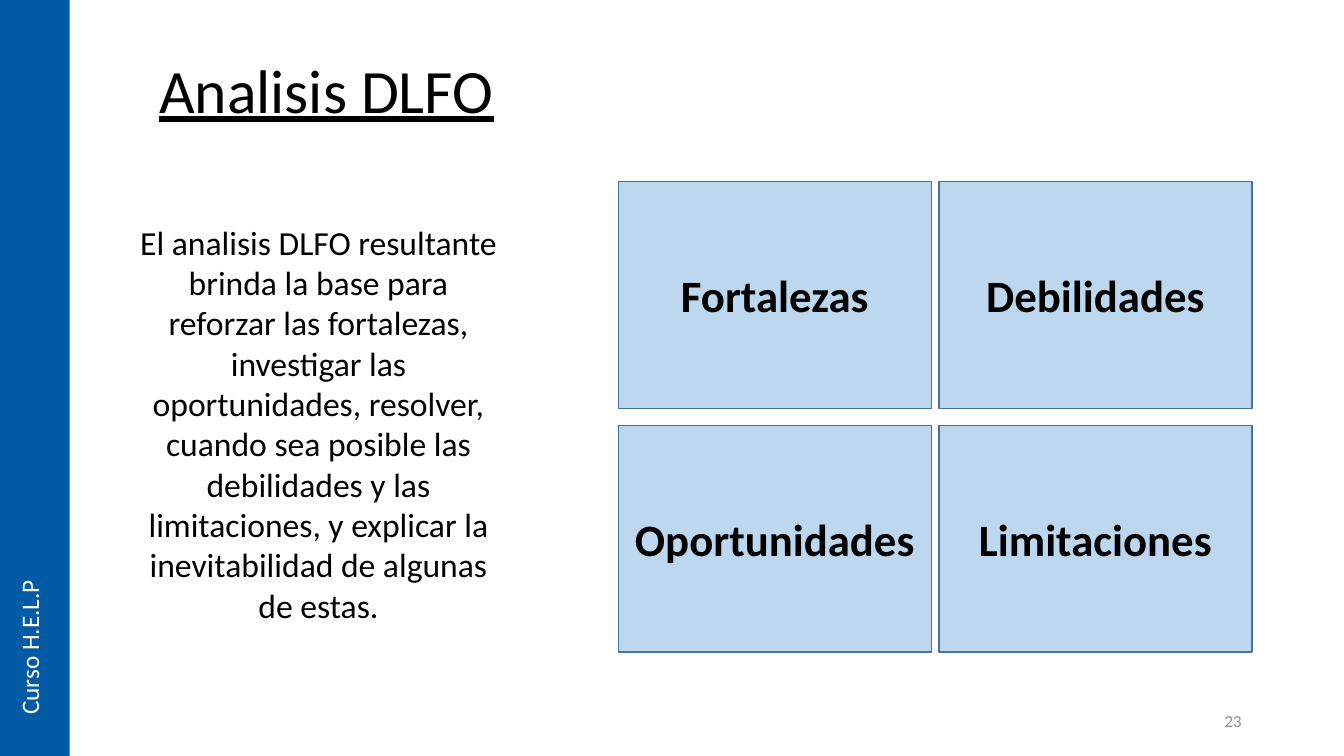
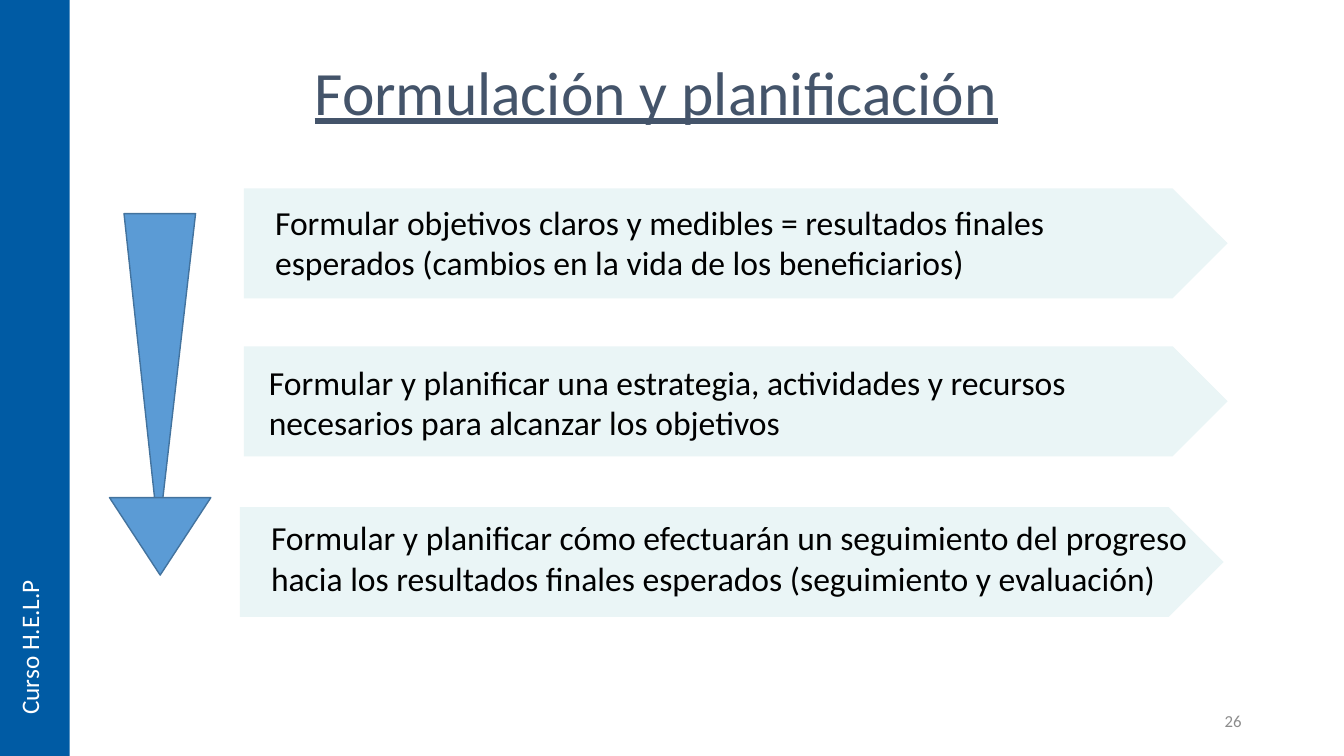
"""Build two course slides: the DLFO analysis and planning steps."""
from pptx import Presentation
from pptx.dml.color import RGBColor
from pptx.enum.shapes import MSO_SHAPE
from pptx.enum.text import MSO_ANCHOR, PP_ALIGN
from pptx.util import Pt

COLORS = {
    "band": "005BA4", "box": "BDD7EE", "edge": "43739E", "arrow": "5B9BD5",
    "plate": "EAF5F6", "title": "44546A", "number": "8C8C8C",
    "black": "000000", "white": "FFFFFF",
}
TITLE = {"size": Pt(44), "underline": True}
BODY = {"size": Pt(24)}
BOX = {"size": Pt(32), "bold": True}
FOOTER = {"size": Pt(12)}
COURSE = {"size": Pt(18)}

COURSE_NAME = "Curso H.E.L.P"
ANALYSIS = {
    "title": "Analisis DLFO",
    "body": "El analisis DLFO resultante brinda la base para reforzar las fortalezas, "
            "investigar las oportunidades, resolver, cuando sea posible las debilidades "
            "y las limitaciones, y explicar la inevitabilidad de algunas de estas.",
    "grid": [["Fortalezas", "Debilidades"], ["Oportunidades", "Limitaciones"]],
    "number": "23",
}
PLANNING = {
    "title": "Formulación y planificación",
    "steps": [
        ("Formular objetivos claros y medibles = resultados finales esperados "
         "(cambios en la vida de los beneficiarios)", (174.2, 134.6), (189.4, 140.4, 642)),
        ("Formular y planificar una estrategia, actividades y recursos necesarios "
         "para alcanzar los objetivos", (174.2, 247.4), (185, 255, 642)),
        ("Formular y planificar cómo efectuarán un seguimiento del progreso hacia "
         "los resultados finales esperados (seguimiento y evaluación)",
         (171.4, 362.2), (186.5, 366, 674)),
    ],
    "number": "26",
}


def rgb(name):
    return RGBColor.from_string(COLORS[name])


def write(sp, text, font, color="black", align=PP_ALIGN.LEFT,
          anchor=MSO_ANCHOR.TOP, spacing=None, wrap=True):
    tf = sp.text_frame
    tf.word_wrap = wrap
    tf.vertical_anchor = anchor
    p = tf.paragraphs[0]
    p.alignment = align
    if spacing:
        p.line_spacing = spacing
    r = p.add_run()
    r.text = text
    for key, value in {"name": "Calibri", **font}.items():
        setattr(r.font, key, value)
    r.font.color.rgb = rgb(color)


def add_text(s, box, text, font, **style):
    sp = s.shapes.add_textbox(*map(Pt, box))
    write(sp, text, font, **style)
    return sp


def add_block(s, kind, box, fill, edge=None, adj=None, rotation=0):
    sp = s.shapes.add_shape(kind, *map(Pt, box))
    sp.shadow.inherit = False
    sp.rotation = rotation
    sp.fill.solid()
    sp.fill.fore_color.rgb = rgb(fill)
    if edge:
        sp.line.color.rgb = rgb(edge)
        sp.line.width = Pt(1)
    else:
        sp.line.fill.background()
    if adj is not None:
        sp.adjustments[0] = adj
    return sp


def add_slide(prs, content, title_box, **title_style):
    s = prs.slides.add_slide(prs.slide_layouts[6])
    add_block(s, MSO_SHAPE.RECTANGLE, (0, 0, 49.7, 540), "band")
    name = add_text(s, (6.5, 413.3, 36, 104.4), COURSE_NAME, COURSE,
                    color="white", wrap=False)
    name.text_frame._txBody.bodyPr.set("vert", "vert270")
    add_text(s, title_box, content["title"], TITLE, anchor=MSO_ANCHOR.MIDDLE,
             spacing=0.9, **title_style)
    add_text(s, (678, 500.5, 216, 28.8), content["number"], FOOTER, color="number",
             align=PP_ALIGN.RIGHT, anchor=MSO_ANCHOR.MIDDLE)
    return s


def build_analysis(prs):
    s = add_slide(prs, ANALYSIS, (106.6, 26.6, 339, 80))
    add_text(s, (90.7, 154.8, 273.6, 298), ANALYSIS["body"], BODY, align=PP_ALIGN.CENTER)
    left, top, width, height, gap_x, gap_y = 441.8, 129.6, 223.4, 162, 5.6, 12.2
    for row, labels in enumerate(ANALYSIS["grid"]):
        for col, label in enumerate(labels):
            box = (left + col * (width + gap_x), top + row * (height + gap_y), width, height)
            sp = add_block(s, MSO_SHAPE.RECTANGLE, box, "box", "edge")
            write(sp, label, BOX, align=PP_ALIGN.CENTER, anchor=MSO_ANCHOR.MIDDLE)


def build_planning(prs):
    s = add_slide(prs, PLANNING, (162.7, 23, 612, 90), color="title", align=PP_ALIGN.CENTER)
    for box, adj in (((88.6, 152.6, 51.1, 229.7), 0.517), ((78.2, 355.4, 72.4, 55.4), 0.5)):
        add_block(s, MSO_SHAPE.ISOSCELES_TRIANGLE, box, "arrow", "edge", adj, 180)
    for text, corner, (x, y, width) in PLANNING["steps"]:
        add_block(s, MSO_SHAPE.PENTAGON, (*corner, 702.7, 78.5), "plate", adj=0.5)
        add_text(s, (x, y, width, 65.5), text, BODY)


def main():
    prs = Presentation()
    prs.slide_width, prs.slide_height = Pt(960), Pt(540)
    build_analysis(prs)
    build_planning(prs)
    prs.save("out.pptx")


if __name__ == "__main__":
    main()
